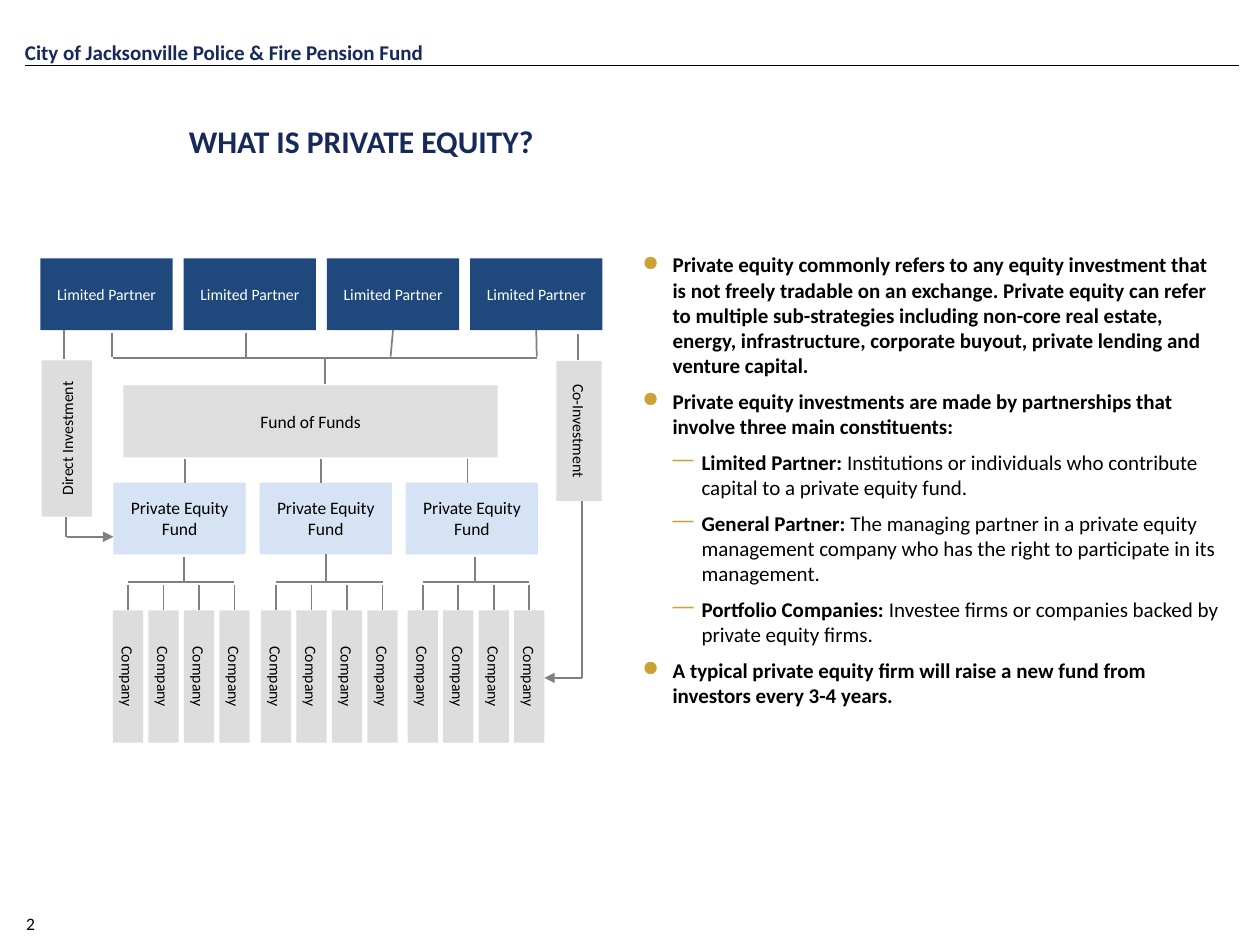
"""Build the private equity structure slide."""
from dataclasses import dataclass
from typing import NamedTuple, Optional

from lxml import etree
from pptx import Presentation
from pptx.dml.color import RGBColor
from pptx.enum.shapes import MSO_CONNECTOR, MSO_SHAPE
from pptx.enum.text import MSO_ANCHOR, PP_ALIGN
from pptx.oxml.ns import qn
from pptx.util import Emu, Inches, Pt

RECTANGLE = MSO_SHAPE.RECTANGLE
STRAIGHT = MSO_CONNECTOR.STRAIGHT
TOP, MIDDLE, BOTTOM = MSO_ANCHOR.TOP, MSO_ANCHOR.MIDDLE, MSO_ANCHOR.BOTTOM
CENTER = PP_ALIGN.CENTER
CELL = Inches(0.1)
COLUMNS, ROWS = 100, 75
SIDE_TOP, SIDE_LEFT, SIDE_BOTTOM, SIDE_RIGHT = range(4)


@dataclass(frozen=True)
class Theme:
    """Colours, font and type sizes of the slide."""
    font: str = "Calibri"
    navy: str = "16295A"
    gold: str = "CBA135"
    black: str = "000000"
    white: str = "FFFFFF"
    partner: str = "1F497D"
    pool: str = "C0C0C0"
    fund: str = "8EB4E3"
    grey: str = "DDDDDD"
    wire: str = "808080"
    title: float = 18
    body: float = 12
    label: float = 10
    small: float = 9


THEME = Theme()


class Area(NamedTuple):
    """Left, top, width and height in grid cells."""
    left: float
    top: float
    width: float
    height: float


class BoxStyle(NamedTuple):
    """Look of one kind of diagram box."""
    fill: str
    color: str
    size: float
    opacity: int = 100
    wrap: bool = False


class Point(NamedTuple):
    """Bullet text: a bold lead, a plain rest and an outline level."""
    lead: str
    rest: str = ""
    level: int = 0


PARTNER = BoxStyle(THEME.partner, THEME.white, THEME.small)
POOL = BoxStyle(THEME.pool, THEME.black, THEME.label, 52)
FUND = BoxStyle(THEME.fund, THEME.black, THEME.label, 37, True)
SIDEBAR = BoxStyle(THEME.grey, THEME.black, THEME.small)

POINTS = (
    Point("Private equity commonly refers to any equity investment that is not freely tradable "
          "on an exchange. Private equity can refer to multiple sub-strategies including non-core "
          "real estate, energy, infrastructure, corporate buyout, private lending and venture capital."),
    Point("Private equity investments are made by partnerships that involve three main constituents:"),
    Point("Limited Partner: ", "Institutions or individuals who contribute capital to a private equity fund.", 1),
    Point("General Partner: ", "The managing partner in a private equity management company who has the "
          "right to participate in its management.", 1),
    Point("Portfolio Companies: ", "Investee firms or companies backed by private equity firms.", 1),
    Point("A typical private equity firm will raise a new fund from investors every 3-4 years."),
)


def cells(count: float) -> Emu:
    """Turn grid cells into a length."""
    return Emu(round(count * CELL))


def style_font(font, size: float, color: str, bold: bool = False) -> None:
    """Apply the theme font with a size, colour and weight."""
    font.name, font.size, font.bold = THEME.font, Pt(size), bold
    font.color.rgb = RGBColor.from_string(color)


def add_text(page, area: Area, text: str, size: float, color: str, bold: bool = False, anchor=TOP):
    """Add a wrapping text box with one paragraph."""
    box = page.shapes.add_textbox(*map(cells, area))
    frame = box.text_frame
    frame.word_wrap, frame.vertical_anchor = True, anchor
    frame.text = text
    style_font(frame.paragraphs[0].font, size, color, bold)
    return box


def add_box(page, area: Area, text: str, style: BoxStyle, rotation: int = 0):
    """Add a filled rectangle with a centred label."""
    box = page.shapes.add_shape(RECTANGLE, *map(cells, area))
    box.shadow.inherit = False
    box.rotation = rotation
    box.line.fill.background()
    box.fill.solid()
    box.fill.fore_color.rgb = RGBColor.from_string(style.fill)
    if style.opacity < 100:
        color = box.fill._xPr.find(qn("a:solidFill"))[0]
        etree.SubElement(color, qn("a:alpha"), val=str(style.opacity * 1000))
    frame = box.text_frame
    frame.margin_left = frame.margin_right = frame.margin_top = frame.margin_bottom = 0
    frame.word_wrap, frame.vertical_anchor = style.wrap, MIDDLE
    frame.text = text
    para = frame.paragraphs[0]
    para.alignment = CENTER
    style_font(para.font, style.size, style.color)
    return box


def add_upright(page, center: float, middle: float, length: float, breadth: float, text: str, rotation: int):
    """Add a turned box around its centre."""
    area = Area(center - length / 2, middle - breadth / 2, length, breadth)
    return add_box(page, area, text, SIDEBAR, rotation)


def add_line(page, start: tuple[float, float], end: tuple[float, float], color: str = THEME.wire,
             width: float = 1, arrow: bool = False):
    """Add a straight line, with an arrowhead at its end if wanted."""
    line = page.shapes.add_connector(STRAIGHT, *map(cells, (*start, *end)))
    line.line.width = Pt(width)
    line.line.color.rgb = RGBColor.from_string(color)
    if arrow:
        etree.SubElement(line.line._get_or_add_ln(), qn("a:tailEnd"), type="triangle")
    etree.SubElement(line._element.spPr, qn("a:effectLst"))
    return line


def join_end(line, box, side: int) -> None:
    """Join a line's end to a turned box and keep its place."""
    x, y = line.end_x, line.end_y
    line.end_connect(box, side)
    line.end_x, line.end_y = x, y


def add_points(page, area: Area, points: tuple[Point, ...]) -> None:
    """Add the bulleted text."""
    frame = page.shapes.add_textbox(*map(cells, area)).text_frame
    frame.word_wrap = True
    for index, point in enumerate(points):
        para = frame.add_paragraph() if index else frame.paragraphs[0]
        para.level = point.level
        props = para._p.get_or_add_pPr()
        props.set("marL", str(cells((2.4, 4.7)[point.level])))
        props.set("indent", str(-cells((2.4, 2.3)[point.level])))
        para.space_before = Pt(6 if index else 0)
        color = etree.SubElement(props, qn("a:buClr"))
        etree.SubElement(color, qn("a:srgbClr"), val=THEME.gold)
        etree.SubElement(props, qn("a:buChar"), char="●—"[point.level])
        for text, bold in ((point.lead, True), (point.rest, False)):
            if text:
                span = para.add_run()
                span.text = text
                style_font(span.font, THEME.body, THEME.black, bold)


def add_companies(page, first: float, stem: float, fund: Optional[object]):
    """Add four companies under a fund and return the last one."""
    centers = [first + 2.82 * index for index in range(4)]
    trunk = add_line(page, (stem, 44.2), (stem, 46.1))
    if fund is not None:
        trunk.begin_connect(fund, SIDE_BOTTOM)
    add_line(page, (centers[0], 46.2), (centers[-1], 46.2))
    for center in centers:
        company = add_upright(page, center, 53.7, 10.5, 2.4, "Company", 90)
        join_end(add_line(page, (center, 46.4), (center, 48.4)), company, SIDE_LEFT)
    return company


def add_diagram(page) -> None:
    """Draw the partners, funds, companies and their links."""
    partners = [add_box(page, Area(3.2 + 11.37 * index, 20.5, 10.5, 5.7), "Limited Partner", PARTNER)
                for index in range(4)]
    for index, x in enumerate((8.9, 19.5, 31, 42.6)):
        drop = add_line(page, (x, 26.4), (x, 28.3))
        if index > 1:
            drop.begin_connect(partners[index], SIDE_BOTTOM)
    add_line(page, (9, 28.4), (42.6, 28.4))
    add_line(page, (25.8, 28.5), (25.8, 30.5))
    add_box(page, Area(9.8, 30.6, 29.7, 5.7), "Fund of Funds", POOL)
    for index, (feed, stem, first) in enumerate(((14.7, 14.6, 10.15), (25.5, 25.85, 21.9), (37.1, 37.7, 33.55))):
        add_line(page, (feed, 36.4), (feed, 38.3))
        fund = add_box(page, Area(9 + 11.6 * index, 38.3, 10.5, 5.7), "Private Equity Fund", FUND)
        company = add_companies(page, first, stem, fund if index == 1 else None)
    direct = add_upright(page, 5.3, 34.8, 12.4, 4, "Direct Investment", 270)
    shared = add_upright(page, 45.95, 34.2, 11.1, 3.6, "Co-Investment", 90)
    join_end(add_line(page, (5.1, 26.2), (5.1, 28.5)), direct, SIDE_RIGHT)
    join_end(add_line(page, (5.25, 42.6), (5.25, 41)), direct, SIDE_LEFT)
    add_line(page, (5.3, 42.6), (9, 42.6), arrow=True)
    join_end(add_line(page, (45.9, 26.5), (45.9, 28.6)), shared, SIDE_LEFT)
    add_line(page, (46.2, 39.8), (46.2, 53.8))
    join_end(add_line(page, (46.2, 53.8), (43.2, 53.8), arrow=True), company, SIDE_TOP)


def main() -> None:
    """Build and save the deck."""
    deck = Presentation()
    deck.slide_width, deck.slide_height = cells(COLUMNS), cells(ROWS)
    page = deck.slides.add_slide(deck.slide_layouts[6])
    add_line(page, (2, 5.2), (98.3, 5.2), THEME.black, 0.5)
    add_text(page, Area(1.1, 72, 32.3, 2.7), "2", THEME.label, THEME.black)
    add_text(page, Area(1, 1.4, 97.6, 4.2), "City of Jacksonville Police & Fire Pension Fund",
             THEME.body, THEME.navy, True, BOTTOM)
    add_points(page, Area(50, 19.5, 48.3, 42), POINTS)
    add_diagram(page)
    add_text(page, Area(14, 9.2, 37, 3.6), "WHAT IS PRIVATE EQUITY?", THEME.title, THEME.navy, True)
    deck.save("out.pptx")


if __name__ == "__main__":
    main()
